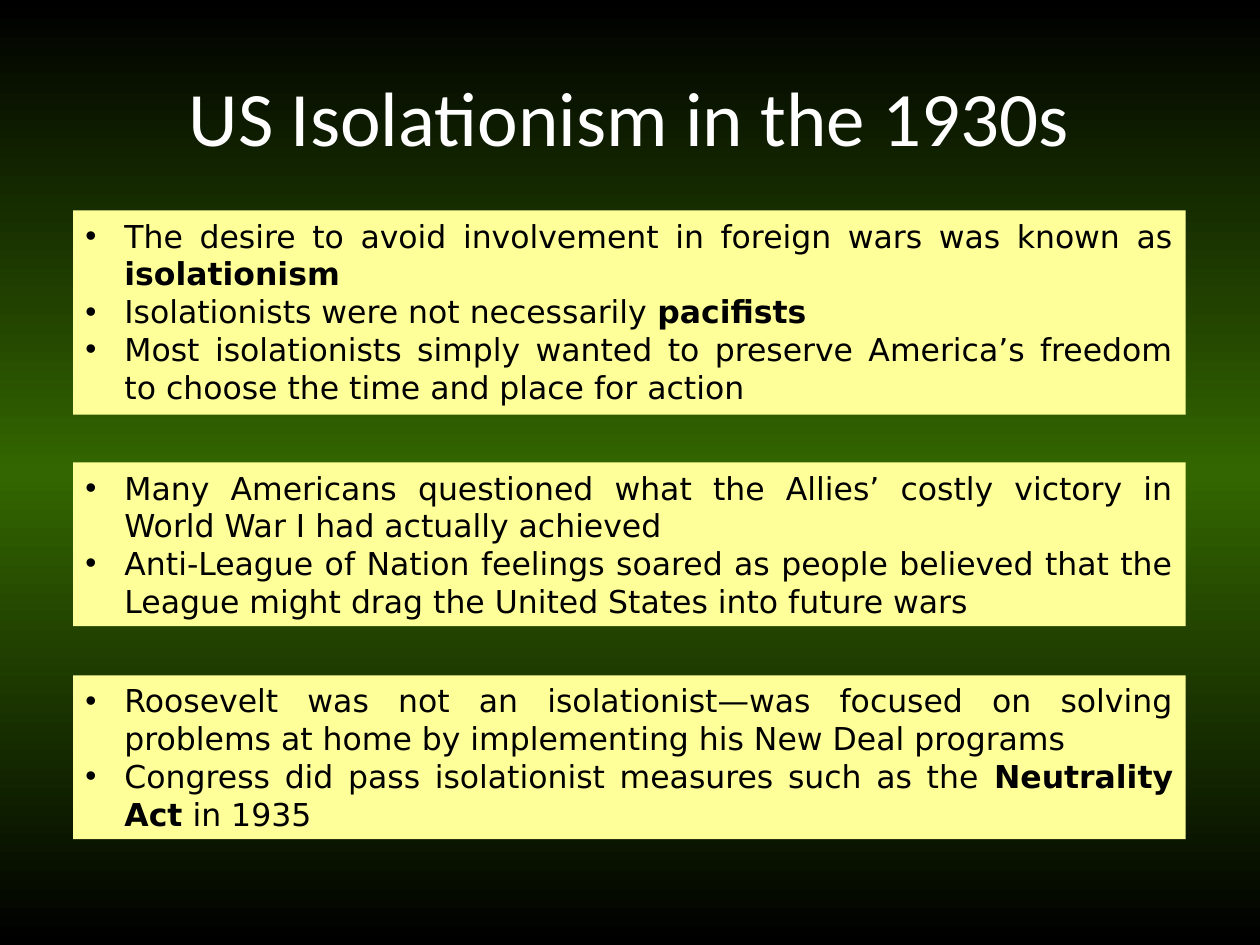
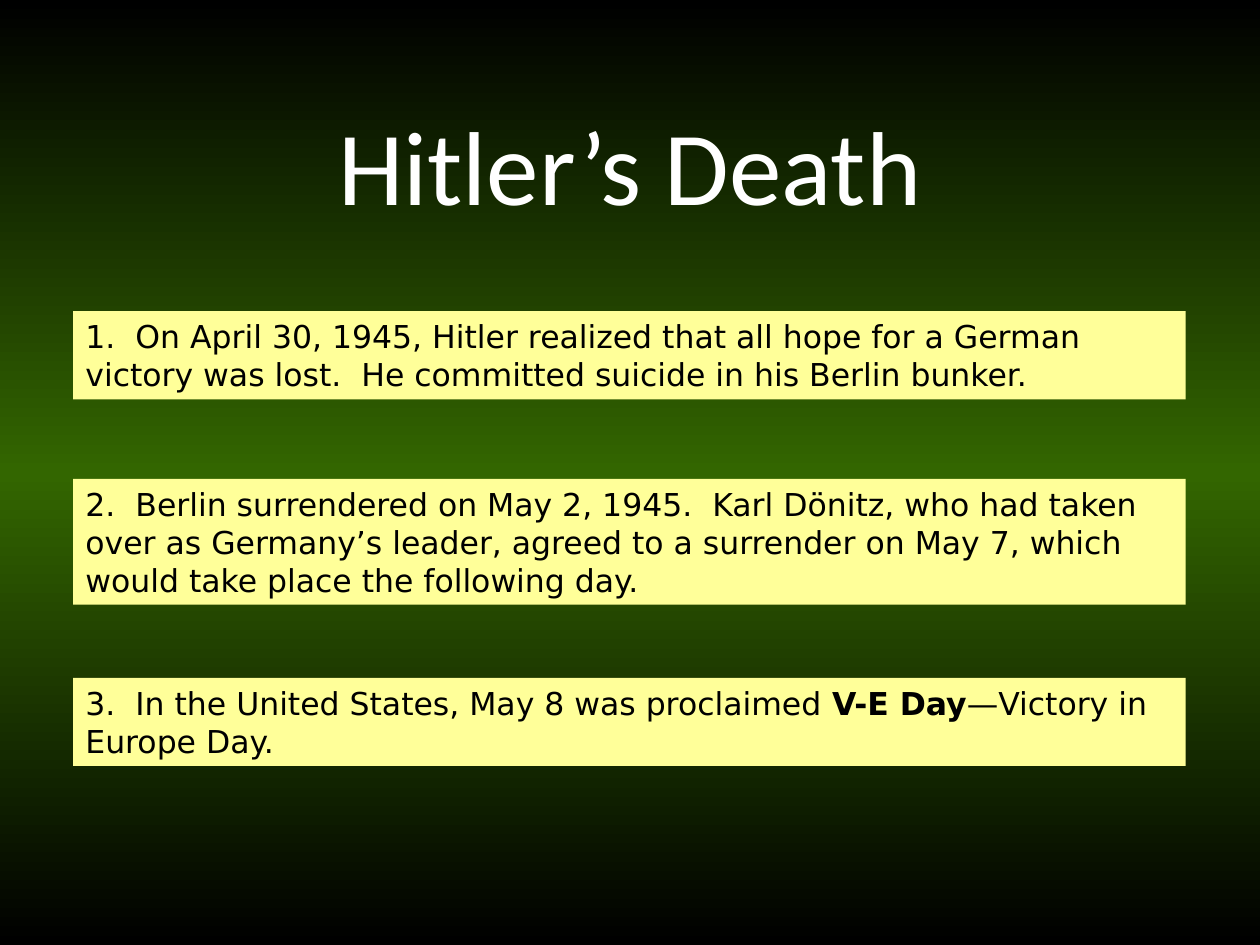
import copy
from dataclasses import dataclass

import pptx
import pptx.dml.color
import pptx.enum.shapes
import pptx.enum.text
import pptx.oxml
import pptx.oxml.ns
import pptx.util

Inches = pptx.util.Inches
ALIGN = pptx.enum.text.PP_ALIGN
FIT = pptx.enum.text.MSO_AUTO_SIZE
ANCHOR = pptx.enum.text.MSO_ANCHOR

BLACK, GREEN, CREAM, WHITE = "000000", "336600", "FFFF99", "FFFFFF"
HEAD_FONT, TEXT_FONT = "Calibri", "DejaVu Sans"
LEFT, WIDTH, INDENT = 0.58, 8.83, 0.31


@dataclass
class Panel:
    top: float
    height: float
    lines: list[str]


@dataclass
class Page:
    title: str
    box: tuple[float, float, float, float]
    size: int
    listed: bool
    panels: list[Panel]


PAGES = [
    Page("US Isolationism in the 1930s", (0.33, 0.25, 9.33, 1.33), 44, True, [
        Panel(1.67, 1.62, [
            "The desire to avoid involvement in foreign wars was known as **isolationism**",
            "Isolationists were not necessarily **pacifists**",
            "Most isolationists simply wanted to preserve America’s freedom "
            "to choose the time and place for action",
        ]),
        Panel(3.67, 1.3, [
            "Many Americans questioned what the Allies’ costly victory in "
            "World War I had actually achieved",
            "Anti-League of Nation feelings soared as people believed that the "
            "League might drag the United States into future wars",
        ]),
        Panel(5.36, 1.3, [
            "Roosevelt was not an isolationist—was focused on solving "
            "problems at home by implementing his New Deal programs",
            "Congress did pass isolationist measures such as the **Neutrality Act** in 1935",
        ]),
    ]),
    Page("Hitler’s Death", (0.25, 0.67, 9.5, 1.25), 60, False, [
        Panel(2.47, 0.7, [
            "1.  On April 30, 1945, Hitler realized that all hope for a German "
            "victory was lost.  He committed suicide in his Berlin bunker.",
        ]),
        Panel(3.8, 1.0, [
            "2.  Berlin surrendered on May 2, 1945.  Karl Dönitz, who had taken "
            "over as Germany’s leader, agreed to a surrender on May 7, which "
            "would take place the following day.",
        ]),
        Panel(5.38, 0.7, [
            "3.  In the United States, May 8 was proclaimed **V-E Day**—Victory in Europe Day.",
        ]),
    ]),
]


def paint(target, color: str) -> None:
    target.rgb = pptx.dml.color.RGBColor.from_string(color)


def write(para, text: str, *, size: int, font: str, color: str, align) -> None:
    para.alignment = align
    for index, part in enumerate(text.split("**")):
        if part:
            run = para.add_run()
            run.text = part
            run.font.size = pptx.util.Pt(size)
            run.font.name = font
            run.font.bold = index % 2 == 1
            paint(run.font.color, color)


def bullet(para) -> None:
    props = para._p.get_or_add_pPr()
    props.set("marL", str(Inches(INDENT)))
    props.set("indent", str(-Inches(INDENT)))
    for tag, key, value in (("buFont", "typeface", "Arial"), ("buChar", "char", "•")):
        mark = pptx.oxml.parse_xml(f'<a:{tag} {pptx.oxml.ns.nsdecls("a")} {key}="{value}"/>')
        props.append(mark)


def shade(master) -> None:
    fill = master.background.fill
    fill.gradient()
    fill.gradient_angle = 90
    first = fill.gradient_stops[0]._gs
    first.addnext(copy.deepcopy(first))
    for stop, place, color in zip(fill.gradient_stops, (0, 0.5, 1), (BLACK, GREEN, BLACK)):
        stop.position = place
        paint(stop.color, color)


def draw_title(slide, page: Page) -> None:
    title = slide.shapes.title
    title.left, title.top, title.width, title.height = map(Inches, page.box)
    frame = title.text_frame
    frame.auto_size = FIT.NONE
    frame.vertical_anchor = ANCHOR.MIDDLE
    write(frame.paragraphs[0], page.title, size=page.size, font=HEAD_FONT,
          color=WHITE, align=ALIGN.CENTER)


def draw_panel(slide, panel: Panel, listed: bool) -> None:
    shape = slide.shapes.add_shape(
        pptx.enum.shapes.MSO_SHAPE.RECTANGLE,
        Inches(LEFT), Inches(panel.top), Inches(WIDTH), Inches(panel.height))
    shape.shadow.inherit = False
    shape.fill.solid()
    paint(shape.fill.fore_color, CREAM)
    shape.line.fill.background()
    frame = shape.text_frame
    frame.word_wrap = True
    frame.auto_size = FIT.SHAPE_TO_FIT_TEXT
    frame.vertical_anchor = ANCHOR.TOP
    for index, line in enumerate(panel.lines):
        para = frame.add_paragraph() if index else frame.paragraphs[0]
        write(para, line, size=18, font=TEXT_FONT, color=BLACK,
              align=ALIGN.JUSTIFY if listed else ALIGN.LEFT)
        if listed:
            bullet(para)


def main() -> None:
    deck = pptx.Presentation()
    deck.slide_width, deck.slide_height = Inches(10), Inches(7.5)
    shade(deck.slide_master)
    layout = deck.slide_layouts.get_by_name("Title Only")
    for page in PAGES:
        slide = deck.slides.add_slide(layout)
        draw_title(slide, page)
        for panel in page.panels:
            draw_panel(slide, panel, page.listed)
    deck.save("out.pptx")


if __name__ == "__main__":
    main()
